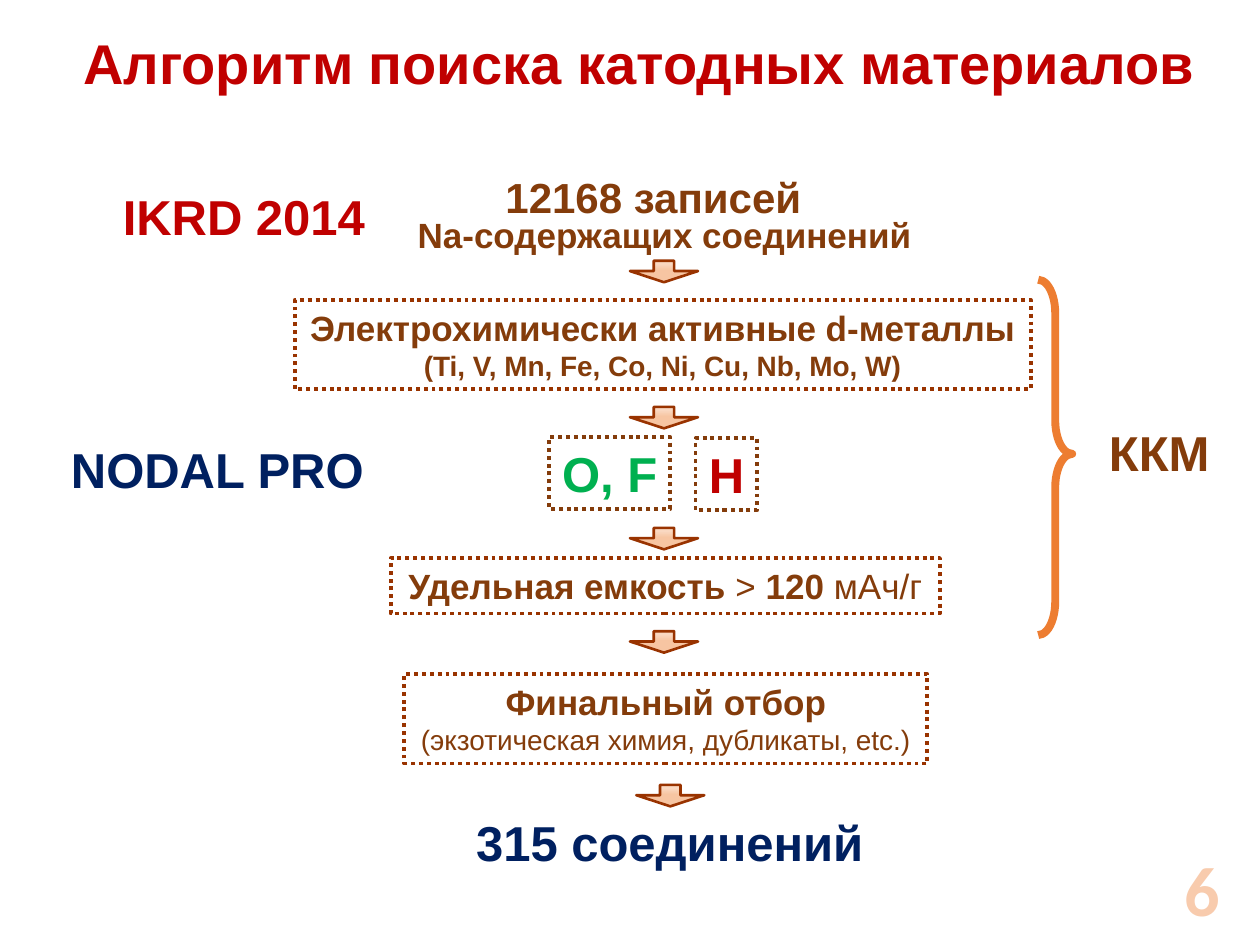
from copy import deepcopy
from dataclasses import dataclass

from pptx import Presentation
from pptx import util as u
from pptx.dml.color import RGBColor
from pptx.enum import dml, shapes, text

RED = RGBColor(0xC0, 0x00, 0x00)
BROWN = RGBColor(0x84, 0x3C, 0x0B)
RUST = RGBColor(0x99, 0x33, 0x00)
NAVY = RGBColor(0x00, 0x20, 0x60)
GREEN = RGBColor(0x00, 0xB0, 0x50)
ORANGE = RGBColor(0xED, 0x7D, 0x31)
PALE_ORANGE = RGBColor(0xF8, 0xCB, 0xAD)
LIGHT_PEACH = RGBColor(0xFA, 0xD8, 0xC1)
PEACH = RGBColor(0xF7, 0xC5, 0xA2)
WHITE = RGBColor(0xFF, 0xFF, 0xFF)

ARROW_STOPS = [(0.15, LIGHT_PEACH), (0.45, PEACH), (0.86, PEACH), (1, LIGHT_PEACH)]
ARROW_PLACES = [(5, 2.07), (5, 3.23), (5, 4.19), (5, 5.01), (5.05, 6.23)]


@dataclass
class Run:
    text: str
    size: float = 20
    color: RGBColor = BROWN
    bold: bool = True
    font: str = "Arial"


@dataclass
class Block:
    """A text area: its place in inches and its paragraphs, each a list of runs."""
    left: float
    top: float
    width: float
    height: float
    paragraphs: list[list[Run]]


@dataclass
class Step(Block):
    """A dotted box of the flow chart."""
    line: RGBColor = RUST
    fill: RGBColor | None = None


TITLE = Block(0.46, 0.13, 9.23, 0.68,
              [[Run("Алгоритм поиска катодных материалов", 32, RED)]])
SLIDE_NUMBER = Block(9.3, 6.85, 0.46, 0.4,
                     [[Run("6", 40, PALE_ORANGE, font="Calibri")]])
TIGHT_LABELS = [
    Block(3.04, 1.31, 4.29, 0.5, [[Run("12168 записей", 24)]]),
    Block(3.13, 1.58, 4.29, 0.5, [[Run("Na-содержащих соединений")]]),
    Block(8.66, 3.39, 1.08, 0.48, [[Run("ККМ", 28)]]),
]
LABELS = [
    Block(0.87, 1.43, 2.13, 0.57, [[Run("IKRD 2014", 28, RED)]]),
    Block(0.46, 3.44, 2.53, 0.57, [[Run("NODAL PRO", 28, NAVY)]]),
    Block(3.66, 6.4, 3.31, 0.57, [[Run("315 соединений", 28, NAVY)]]),
]
STEPS = [
    Step(2.34, 2.38, 5.84, 0.71, [
        [Run("Электрохимически активные d-металлы")],
        [Run("(Ti, V, Mn, Fe, Co, Ni, Cu, Nb, Mo, W)", 16)]]),
    Step(4.36, 3.47, 0.96, 0.57, [[Run("O, F", 28, GREEN)]], BROWN, WHITE),
    Step(5.52, 3.48, 0.49, 0.57, [[Run("H", 28, RED)]], BROWN, WHITE),
    Step(3.1, 4.43, 4.36, 0.44, [
        [Run("Удельная емкость "), Run("> ", bold=False),
         Run("120 "), Run("мАч/г", bold=False)]]),
    Step(3.21, 5.35, 4.15, 0.71, [
        [Run("Финальный отбор")],
        [Run("(экзотическая химия, дубликаты, etc.)", 16, bold=False)]]),
]


def place(block: Block) -> tuple:
    return tuple(u.Inches(value) for value in
                 (block.left, block.top, block.width, block.height))


def write(shape, paragraphs: list[list[Run]], *, anchor=text.MSO_ANCHOR.TOP,
          align=text.PP_ALIGN.CENTER, spacing: float = 1, wrap: bool = False) -> None:
    frame = shape.text_frame
    frame.word_wrap = wrap
    frame.auto_size = text.MSO_AUTO_SIZE.NONE
    frame.vertical_anchor = anchor
    for index, runs in enumerate(paragraphs):
        paragraph = frame.add_paragraph() if index else frame.paragraphs[0]
        paragraph.alignment = align
        paragraph.line_spacing = spacing
        for item in runs:
            run = paragraph.add_run()
            run.text = item.text
            run.font.name = item.font
            run.font.size = u.Pt(item.size)
            run.font.bold = item.bold
            run.font.color.rgb = item.color


def add_label(slide, block: Block, **text_format) -> None:
    shape = slide.shapes.add_textbox(*place(block))
    write(shape, block.paragraphs, **text_format)


def add_step(slide, step: Step) -> None:
    shape = slide.shapes.add_shape(shapes.MSO_SHAPE.RECTANGLE, *place(step))
    shape.shadow.inherit = False
    if step.fill is None:
        shape.fill.background()
    else:
        shape.fill.solid()
        shape.fill.fore_color.rgb = step.fill
    shape.line.color.rgb = step.line
    shape.line.width = u.Pt(2.25)
    shape.line.dash_style = dml.MSO_LINE.ROUND_DOT
    write(shape, step.paragraphs)


def fill_with_stops(shape, stops: list[tuple[float, RGBColor]]) -> None:
    """Give the shape a vertical gradient with any number of stops."""
    shape.fill.gradient()
    shape.fill.gradient_angle = 270
    stop_list = shape.fill._fill._gradFill.gsLst
    while len(stop_list) < len(stops):
        stop_list.append(deepcopy(stop_list[0]))
    for stop, (position, color) in zip(shape.fill.gradient_stops, stops):
        stop.position = position
        stop.color.rgb = color


def add_arrow(slide, left: float, top: float) -> None:
    shape = slide.shapes.add_shape(shapes.MSO_SHAPE.DOWN_ARROW, u.Inches(left),
                                   u.Inches(top), u.Inches(0.54), u.Inches(0.17))
    shape.adjustments[0] = 0.3
    shape.adjustments[1] = 0.52
    shape.shadow.inherit = False
    fill_with_stops(shape, ARROW_STOPS)
    shape.line.color.rgb = RUST
    shape.line.width = u.Pt(1.5)


def add_brace(slide) -> None:
    shape = slide.shapes.add_shape(shapes.MSO_SHAPE.LEFT_BRACE, u.Inches(8.24),
                                   u.Inches(2.22), u.Inches(0.27), u.Inches(2.82))
    shape.rotation = 180
    shape.adjustments[0] = 0.98
    shape.adjustments[1] = 0.51
    shape.shadow.inherit = False
    shape.fill.background()
    shape.line.color.rgb = ORANGE
    shape.line.width = u.Pt(4.5)


def main() -> None:
    presentation = Presentation()
    presentation.slide_width = u.Inches(10)
    presentation.slide_height = u.Inches(7.5)
    slide = presentation.slides.add_slide(presentation.slide_layouts[5])

    title = slide.shapes.title
    title.left, title.top, title.width, title.height = place(TITLE)
    write(title, TITLE.paragraphs, anchor=text.MSO_ANCHOR.BOTTOM, wrap=True)

    for label in TIGHT_LABELS:
        add_label(slide, label, anchor=text.MSO_ANCHOR.BOTTOM, spacing=0.85, wrap=True)
    for step in STEPS:
        add_step(slide, step)
    for left, top in ARROW_PLACES:
        add_arrow(slide, left, top)
    for label in LABELS:
        add_label(slide, label)
    add_brace(slide)
    add_label(slide, SLIDE_NUMBER, anchor=text.MSO_ANCHOR.MIDDLE,
              align=text.PP_ALIGN.RIGHT, wrap=True)

    presentation.save("out.pptx")


if __name__ == "__main__":
    main()
